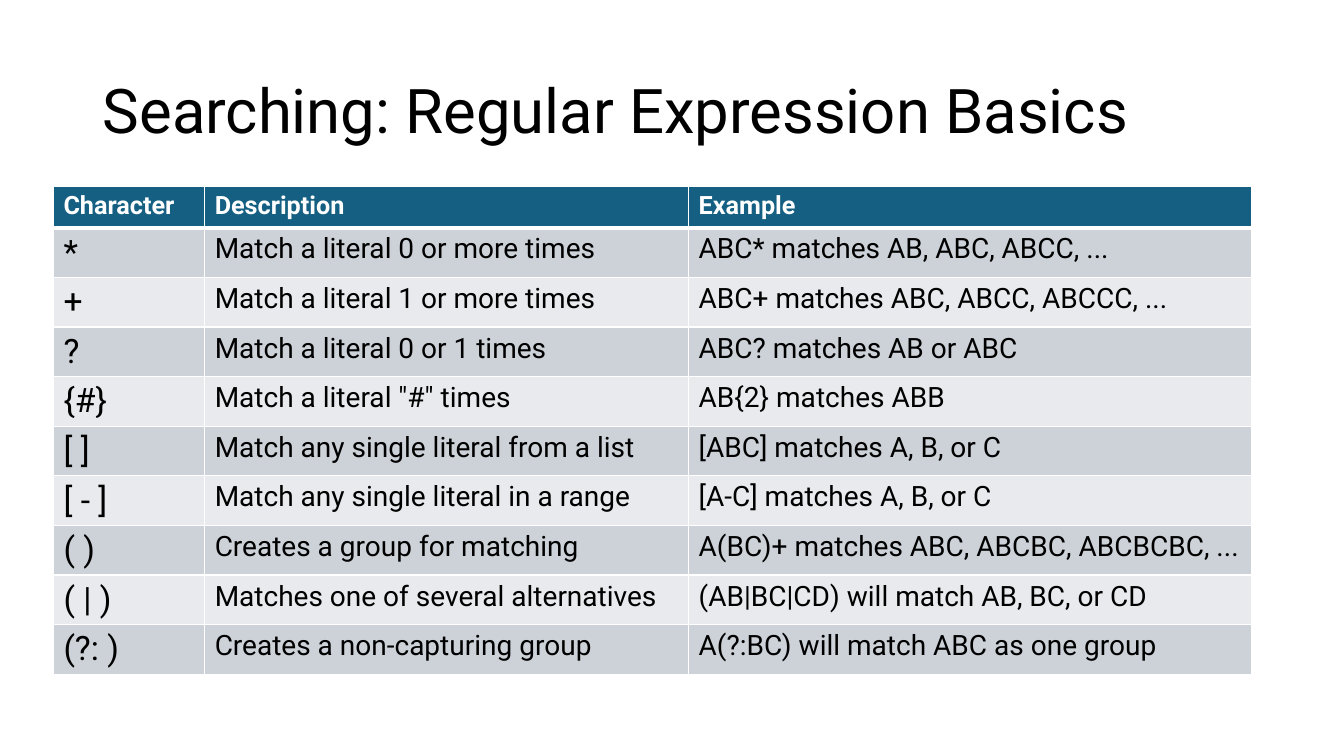
from lxml import etree
from pptx import Presentation
from pptx.dml.color import RGBColor
from pptx.enum.text import MSO_ANCHOR, PP_ALIGN
from pptx.oxml.ns import qn
from pptx.util import Pt

PX = 9144  # 100 px to the inch
FONT = "Roboto"
LEFT, MIDDLE = PP_ALIGN.LEFT, MSO_ANCHOR.MIDDLE
BLACK = RGBColor(0x00, 0x00, 0x00)
WHITE = RGBColor(0xFF, 0xFF, 0xFF)
HEADER_BLUE = RGBColor(0x15, 0x60, 0x82)
BANDS = [RGBColor(0xE8, 0xEA, 0xED), RGBColor(0xCC, 0xD2, 0xD8)]

COLUMN_WIDTHS = [150, 480, 558]
HEADER_HEIGHT, BODY_HEIGHT = 41, 49
BODY_SIZES = [24, 20, 20]
ROWS = [
    ("Character", "Description", "Example"),
    ("*", "Match a literal 0 or more times", "ABC* matches AB, ABC, ABCC, ..."),
    ("+", "Match a literal 1 or more times", "ABC+ matches ABC, ABCC, ABCCC, ..."),
    ("?", "Match a literal 0 or 1 times", "ABC? matches AB or ABC"),
    ("{#}", 'Match a literal "#" times', "AB{2} matches ABB"),
    ("[ ]", "Match any single literal from a list", "[ABC] matches A, B, or C"),
    ("[ - ]", "Match any single literal in a range", "[A-C] matches A, B, or C"),
    ("( )", "Creates a group for matching", "A(BC)+ matches ABC, ABCBC, ABCBCBC, ..."),
    ("( | )", "Matches one of several alternatives", "(AB|BC|CD) will match AB, BC, or CD"),
    ("(?: )", "Creates a non-capturing group", "A(?:BC) will match ABC as one group"),
]


def style_run(r, size, color, bold=False):
    r.font.name = FONT
    r.font.size = Pt(size)
    r.font.bold = bold
    r.font.color.rgb = color


def add_borders(cell, top, bottom):
    tc_pr = cell._tc.get_or_add_tcPr()
    for side, width in (("L", 1), ("R", 1), ("T", top), ("B", bottom)):
        ln = etree.SubElement(tc_pr, qn(f"a:ln{side}"), w=str(Pt(width)))
        fill = etree.SubElement(ln, qn("a:solidFill"))
        etree.SubElement(fill, qn("a:srgbClr"), val=str(WHITE))


prs = Presentation()
prs.slide_width, prs.slide_height = 1333 * PX, 750 * PX
s = prs.slides.add_slide(prs.slide_layouts[5])

# Title
title = s.shapes.title
title.left, title.top, title.width, title.height = 92 * PX, 40 * PX, 1150 * PX, 145 * PX
tf = title.text_frame
tf.text = "Searching: Regular Expression Basics"
tf.vertical_anchor = MIDDLE
p = tf.paragraphs[0]
p.alignment = LEFT
p.line_spacing = 0.9
style_run(p.runs[0], 44, BLACK)

# Table grid
table_height = HEADER_HEIGHT + BODY_HEIGHT * (len(ROWS) - 1)
table = s.shapes.add_table(len(ROWS), len(COLUMN_WIDTHS), 53 * PX, 185 * PX,
                           sum(COLUMN_WIDTHS) * PX, table_height * PX).table
for column, width in zip(table.columns, COLUMN_WIDTHS):
    column.width = width * PX

# Table cells
for i, texts in enumerate(ROWS):
    header = i == 0
    table.rows[i].height = (HEADER_HEIGHT if header else BODY_HEIGHT) * PX
    for j, text in enumerate(texts):
        cell = table.cell(i, j)
        add_borders(cell, top=3 if i == 1 else 1, bottom=3 if header else 1)
        cell.fill.solid()
        cell.fill.fore_color.rgb = HEADER_BLUE if header else BANDS[i % 2]
        cell.text_frame.text = text
        r = cell.text_frame.paragraphs[0].runs[0]
        style_run(r, 18 if header else BODY_SIZES[j], WHITE if header else BLACK, header)

prs.save("out.pptx")
